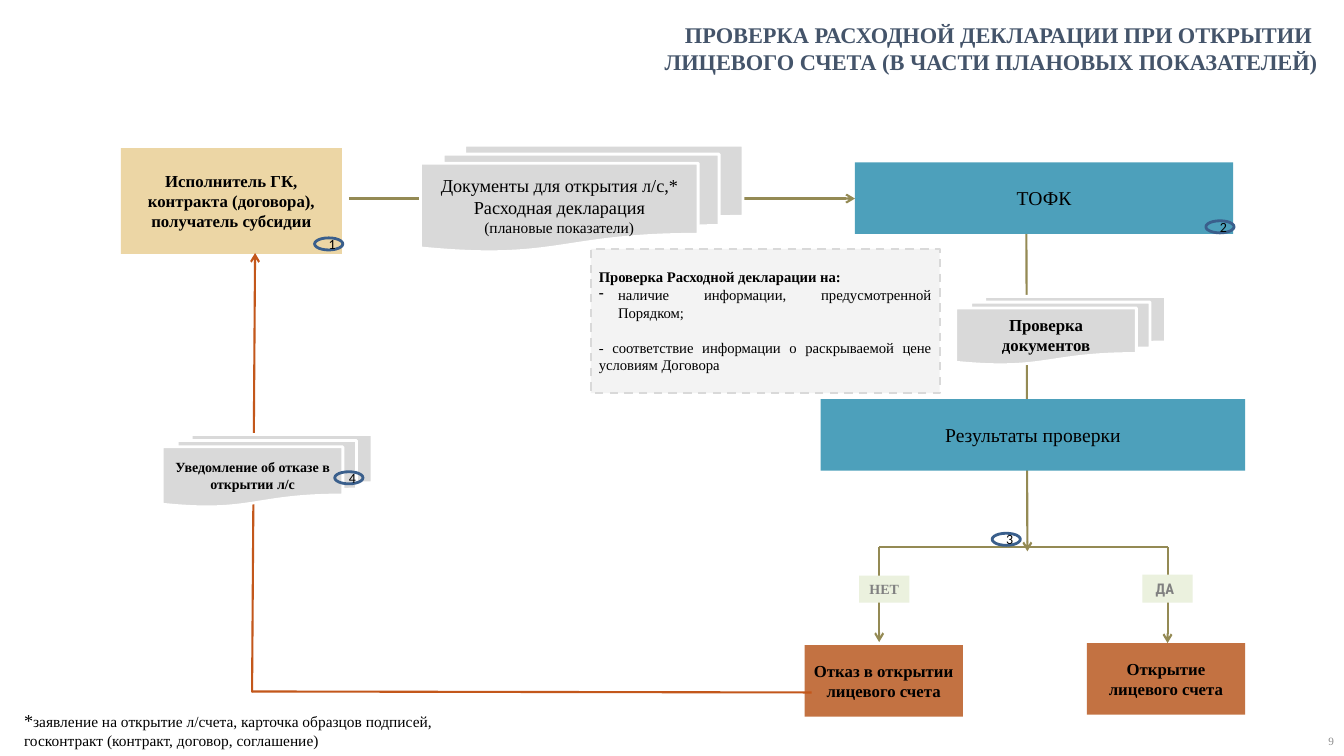
import pptx
import pptx.util
import pptx.dml.color
import pptx.enum.dml
import pptx.enum.shapes
import pptx.enum.text
import pptx.oxml
import pptx.oxml.ns
from lxml import etree

Inches, Pt = pptx.util.Inches, pptx.util.Pt
SHAPE = pptx.enum.shapes.MSO_SHAPE
ALIGN = pptx.enum.text.PP_ALIGN
ANCHOR = pptx.enum.text.MSO_ANCHOR

COLORS = {
    "title": "44546A", "text": "000000", "muted": "808080", "number": "8C8C8C",
    "sand": "ECD6A5", "blue": "4DA0BB", "rust": "BE6732", "gray": "D9D9D9",
    "note": "F2F2F2", "label": "EBF1DE", "white": "FFFFFF",
    "olive": "948A54", "return": "C3571B", "badge": "3A5F8C",
}
SERIF = "Times New Roman"


def rgb(name):
    return pptx.dml.color.RGBColor.from_string(COLORS[name])


def sub(parent, tag, **attrs):
    return etree.SubElement(parent, pptx.oxml.ns.qn(tag), **attrs)


def write(sp, text, size, bold=False, color="text", font=SERIF,
          align=ALIGN.CENTER, anchor=ANCHOR.MIDDLE, insets=(0.1, 0.05, 0.1, 0.05)):
    tf = sp.text_frame
    tf.text = text
    tf.word_wrap = True
    tf.vertical_anchor = anchor
    tf.margin_left, tf.margin_top, tf.margin_right, tf.margin_bottom = map(Inches, insets)
    for p in tf.paragraphs:
        p.alignment = align
        for r in p.runs:
            r.font.size = Pt(size)
            r.font.bold = bold
            r.font.name = font
            r.font.color.rgb = rgb(color)
    return tf


def add_text(s, box, text, size, **style):
    return write(s.shapes.add_textbox(*map(Inches, box)), text, size, **style)


def add_block(s, kind, box, fill=None, line=None, width=2, alpha=None):
    sp = s.shapes.add_shape(kind, *map(Inches, box))
    sp.shadow.inherit = False
    if fill:
        sp.fill.solid()
        sp.fill.fore_color.rgb = rgb(fill)
        if alpha:
            color = sp.fill._xPr.find(".//" + pptx.oxml.ns.qn("a:srgbClr"))
            sub(color, "a:alpha", val=str(alpha * 1000))
    else:
        sp.fill.background()
    if line:
        sp.line.color.rgb = rgb(line)
        sp.line.width = Pt(width)
    else:
        sp.line.fill.background()
    return sp


def add_box(s, box, text, size, fill, bold=False, alpha=None):
    sp = add_block(s, SHAPE.RECTANGLE, box, fill, alpha=alpha)
    write(sp, text, size, bold, insets=(0.08, 0.04, 0.08, 0.04))


def add_documents(s, box, text, size, bold=True):
    sp = add_block(s, SHAPE.FLOWCHART_MULTIDOCUMENT, box, "gray", "white")
    return write(sp, text, size, bold)


def add_badge(s, left, top, number):
    sp = add_block(s, SHAPE.OVAL, (left, top, 0.28, 0.12), line="badge")
    write(sp, str(number), 10, font="Calibri")


def add_label(s, box, text, size, **style):
    sp = add_block(s, SHAPE.RECTANGLE, box, "label")
    write(sp, text, size, True, "muted", anchor=ANCHOR.TOP, **style)


def add_line(s, start, end, color="olive", arrow=True):
    cn = s.shapes.add_connector(pptx.enum.shapes.MSO_CONNECTOR.STRAIGHT,
                                *map(Inches, start + end))
    cn.line.color.rgb = rgb(color)
    cn.line.width = Pt(1.5)
    if arrow:
        sub(cn.line._get_or_add_ln(), "a:tailEnd", type="arrow")
    sub(cn._element.spPr, "a:effectLst")


def add_check_note(s):
    sp = add_block(s, SHAPE.RECTANGLE, (5.86, 2.47, 3.46, 1.43), "note", "gray", 1.5, 92)
    sp.line.dash_style = pptx.enum.dml.MSO_LINE.DASH
    tf = write(sp, "Проверка Расходной декларации на:\n"
               "наличие информации, предусмотренной Порядком;\n"
               "- соответствие информации о раскрываемой цене условиям Договора",
               10.5, align=ALIGN.JUSTIFY, insets=(0.08, 0.04, 0.08, 0.04))
    heading, bullet, last = tf.paragraphs
    heading.alignment = ALIGN.LEFT
    heading.runs[0].font.bold = True
    pPr = bullet._p.get_or_add_pPr()
    pPr.set("marL", str(Inches(0.19)))
    pPr.set("indent", str(-Inches(0.19)))
    sub(pPr, "a:buChar", char="-")
    last.space_before = Pt(12.5)


def main():
    prs = pptx.Presentation()
    prs.slide_width, prs.slide_height = Inches(13.33), Inches(7.5)
    s = prs.slides.add_slide(prs.slide_layouts[6])

    # Flow lines behind the blocks
    add_line(s, (10.18, 2.32), (10.19, 5.47))
    add_line(s, (11.58, 5.43), (11.58, 6.38))
    add_line(s, (8.72, 5.43), (8.72, 6.37))
    add_line(s, (8.72, 5.43), (11.58, 5.43), arrow=False)
    add_line(s, (3.46, 1.97), (8.48, 1.97))

    # Title, footnote and page number
    add_text(s, (2.65, 0.17, 10.56, 0.74),
             "ПРОВЕРКА РАСХОДНОЙ ДЕКЛАРАЦИИ ПРИ ОТКРЫТИИ \n"
             "ЛИЦЕВОГО СЧЕТА (В ЧАСТИ ПЛАНОВЫХ ПОКАЗАТЕЛЕЙ)",
             16, bold=True, color="title", align=ALIGN.RIGHT,
             insets=(0.14, 0.05, 0.14, 0.18))
    tf = add_text(s, (0.14, 6.99, 4.6, 0.5), "*", 13, align=ALIGN.LEFT, anchor=ANCHOR.TOP)
    r = tf.paragraphs[0].add_run()
    r.text = ("заявление на открытие л/счета, карточка образцов подписей, "
              "госконтракт (контракт, договор, соглашение)")
    r.font.size, r.font.name = Pt(11), SERIF
    r.font.color.rgb = rgb("text")
    add_text(s, (13.03, 7.25, 0.3, 0.2), "9", 8, color="number", align=ALIGN.RIGHT)

    # Participants and outcomes
    add_check_note(s)
    add_box(s, (1.2, 1.47, 2.19, 1.05),
            "Исполнитель ГК, контракта (договора), получатель субсидии", 12, "sand", True)
    add_box(s, (8.48, 1.61, 3.75, 0.71), "ТОФК", 14, "blue")
    add_box(s, (8.14, 3.96, 4.21, 0.71), "Результаты проверки", 14, "blue")
    add_box(s, (10.78, 6.38, 1.57, 0.71), "Открытие лицевого счета", 12, "rust", True, 92)
    add_box(s, (7.98, 6.4, 1.57, 0.71), "Отказ в открытии лицевого счета",
            12, "rust", True, 92)

    # Return path for a refusal
    add_line(s, (2.5, 6.86), (8.05, 6.87), "return", arrow=False)
    add_line(s, (2.5, 6.87), (2.53, 2.51), "return")

    # Document stacks
    add_documents(s, (9.48, 2.94, 2.08, 0.68), "Проверка документов", 12)
    add_documents(s, (1.61, 4.31, 2.08, 0.72), "Уведомление об отказе в открытии л/с", 10)
    tf = add_documents(s, (4.17, 1.44, 3.2, 1.06),
                       "Документы для открытия л/с,* Расходная декларация\n"
                       "(плановые показатели)", 13, bold=False)
    tf.paragraphs[1].runs[0].font.size = Pt(11)

    # Decision labels and step numbers
    add_label(s, (11.33, 5.7, 0.5, 0.28), " ДА", 10.5,
              font="Roboto Condensed", align=ALIGN.LEFT)
    add_label(s, (8.52, 5.71, 0.5, 0.27), "НЕТ", 10)
    badges = [(3.12, 2.36), (11.96, 2.19), (9.84, 5.29), (3.32, 4.68)]
    for number, (left, top) in enumerate(badges, 1):
        add_badge(s, left, top, number)

    prs.save("out.pptx")


if __name__ == "__main__":
    main()
